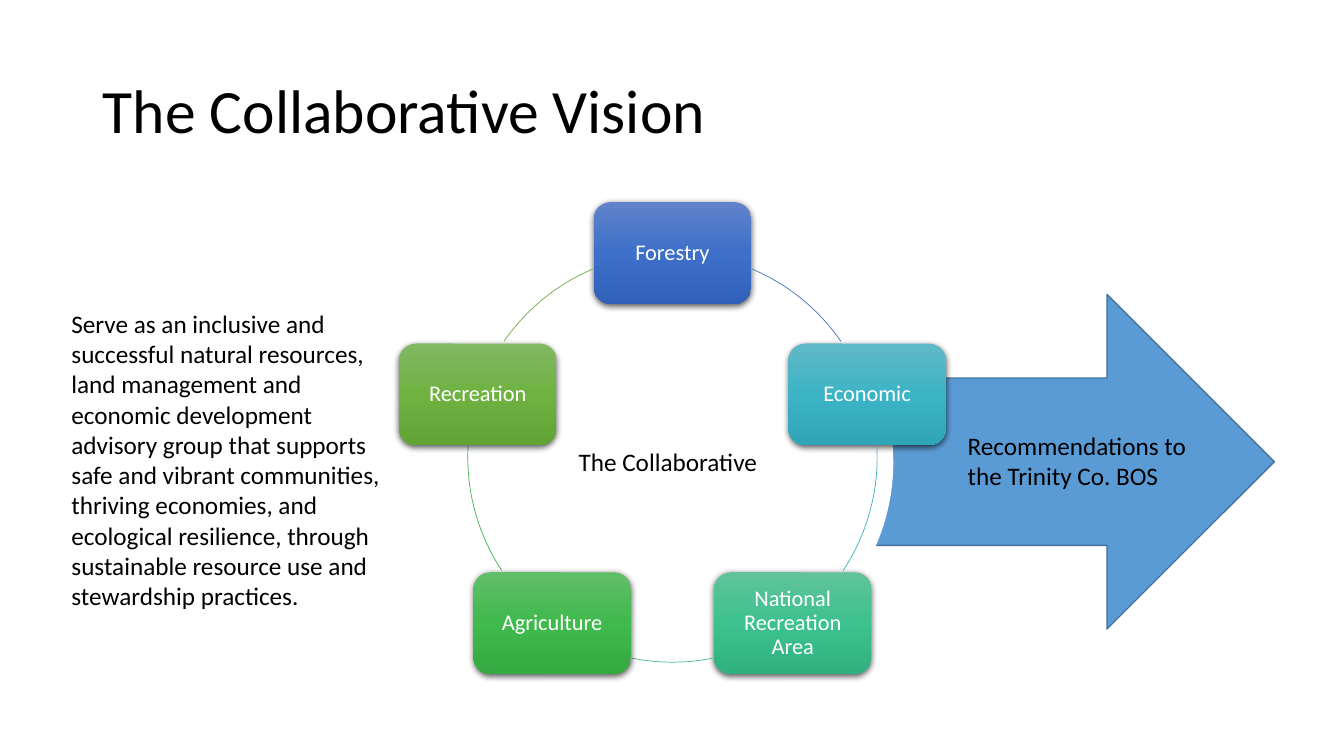
from copy import deepcopy
from math import cos, radians, sin

from lxml import etree
from pptx import Presentation
from pptx.dml.color import RGBColor
from pptx.enum.shapes import MSO_SHAPE
from pptx.enum.text import MSO_ANCHOR, MSO_AUTO_SIZE, PP_ALIGN
from pptx.oxml import parse_xml
from pptx.oxml.ns import nsdecls, qn
from pptx.util import Inches, Pt

ARROW, ELLIPSE, CARD, ARC = (MSO_SHAPE.RIGHT_ARROW, MSO_SHAPE.OVAL,
                             MSO_SHAPE.ROUNDED_RECTANGLE, MSO_SHAPE.ARC)
LEFT, CENTER = PP_ALIGN.LEFT, PP_ALIGN.CENTER
TOP, MIDDLE = MSO_ANCHOR.TOP, MSO_ANCHOR.MIDDLE
GROW = MSO_AUTO_SIZE.SHAPE_TO_FIT_TEXT
BLACK = RGBColor(0, 0, 0)
WHITE = RGBColor(255, 255, 255)
ARROW_FILL = RGBColor(0x5B, 0x9B, 0xD5)
ARROW_LINE = RGBColor(0x43, 0x73, 0x9E)
FONT = "Calibri"

CENTER_X, CENTER_Y, RADIUS = 6.67, 4.54, 2.03
CARD_WIDTH, CARD_HEIGHT = 1.56, 1.01
STEP = 72

TOPICS = [
    ("Forestry", ("6183CB", "3E70CA", "3062BB"), "4472C4", (-67.1, -34.6)),
    ("Economic", ("61B8C7", "3DB4C6", "30A5B7"), "43AFC0", (-3.1, 33.5)),
    ("National Recreation Area", ("60C39A", "3DC18F", "31B080"), "43BB8D", (78.6, 101.4)),
    ("Agriculture", ("60BE68", "40B94D", "34AA41"), "45B451", (146.5, 183.1)),
    ("Recreation", ("81B861", "6FB242", "62A336"), "70AD47", (214.6, 247.1)),
]
NOTES = [
    ((5.64, 4.38, 2.05, 0.4), ["The Collaborative"]),
    ((9.5, 4.22, 2.43, 0.71), ["Recommendations to the Trinity Co. BOS"]),
    ((0.61, 3.01, 3.29, 3.13), [
        "Serve as an inclusive and successful natural resources, land management "
        "and economic development advisory group that supports safe and vibrant "
        "communities, thriving economies, and",
        "ecological resilience, through",
        "sustainable resource use and",
        "stewardship practices.",
    ]),
]
SHADOW = (f'<a:effectLst {nsdecls("a")}><a:outerShdw blurRad="57150" dist="19050" '
          'dir="5400000" algn="ctr" rotWithShape="0"><a:srgbClr val="000000">'
          '<a:alpha val="63000"/></a:srgbClr></a:outerShdw></a:effectLst>')


def write(box, lines, size, color, align, anchor, spacing):
    frame = box.text_frame
    frame.word_wrap = True
    frame.vertical_anchor = anchor
    frame.text = "\n".join(lines)
    for para in frame.paragraphs:
        para.alignment = align
        para.line_spacing = spacing
        for span in para.runs:
            for key, value in {"name": FONT, "size": Pt(size)}.items():
                setattr(span.font, key, value)
            span.font.color.rgb = color


def add_plain(kind, left, top, width, height):
    box = page.shapes.add_shape(kind, *map(Inches, (left, top, width, height)))
    box.shadow.inherit = False
    box.line.fill.background()
    return box


deck = Presentation()
deck.slide_width, deck.slide_height = Inches(13.33), Inches(7.5)
page = deck.slides.add_slide(deck.slide_layouts[5])

title = page.shapes.title
for key, value in {"left": 0.92, "top": 0.4, "width": 11.5, "height": 1.45}.items():
    setattr(title, key, Inches(value))
write(title, ["The Collaborative Vision"], 44, BLACK, LEFT, MIDDLE, 0.9)

arrow = add_plain(ARROW, 8.68, 2.92, 3.96, 3.32)
arrow.fill.solid()
arrow.fill.fore_color.rgb = ARROW_FILL
arrow.line.color.rgb = ARROW_LINE
arrow.line.width = Pt(1)

backdrop = add_plain(ELLIPSE, 4.32, 2.42, 4.54, 4.33)
backdrop.fill.solid()
backdrop.fill.fore_color.rgb = WHITE

for index, (topic, shades, arc_color, angles) in enumerate(TOPICS):
    turn = radians(STEP * index - 90)
    card = add_plain(CARD, CENTER_X + RADIUS * cos(turn) - CARD_WIDTH / 2,
                     CENTER_Y + RADIUS * sin(turn) - CARD_HEIGHT / 2,
                     CARD_WIDTH, CARD_HEIGHT)
    card.fill.gradient()
    card.fill.gradient_angle = 270
    stops = next(card.element.spPr.iter(qn("a:gsLst")))
    stops.append(deepcopy(stops[0]))
    for stop, shade, position in zip(card.fill.gradient_stops, shades, (0, 0.5, 1)):
        stop.color.rgb = RGBColor.from_string(shade)
        stop.position = position
    effects = card.element.spPr.find(qn("a:effectLst"))
    card.element.spPr.replace(effects, parse_xml(SHADOW))
    for side in ("left", "top", "right", "bottom"):
        setattr(card.text_frame, f"margin_{side}", Inches(0.07))
    write(card, [topic], 16, WHITE, CENTER, MIDDLE, 0.9)

    arc = add_plain(ARC, CENTER_X - RADIUS, CENTER_Y - RADIUS, 2 * RADIUS, 2 * RADIUS)
    for end, angle in enumerate(angles):
        arc.adjustments[end] = angle % 360 * 0.6
    arc.fill.background()
    arc.line.color.rgb = RGBColor.from_string(arc_color)
    arc.line.width = Pt(0.5)

for place, lines in NOTES:
    note = page.shapes.add_textbox(*map(Inches, place))
    write(note, lines, 18, BLACK, LEFT, TOP, 1.0)
    note.text_frame.auto_size = GROW

deck.save("out.pptx")
